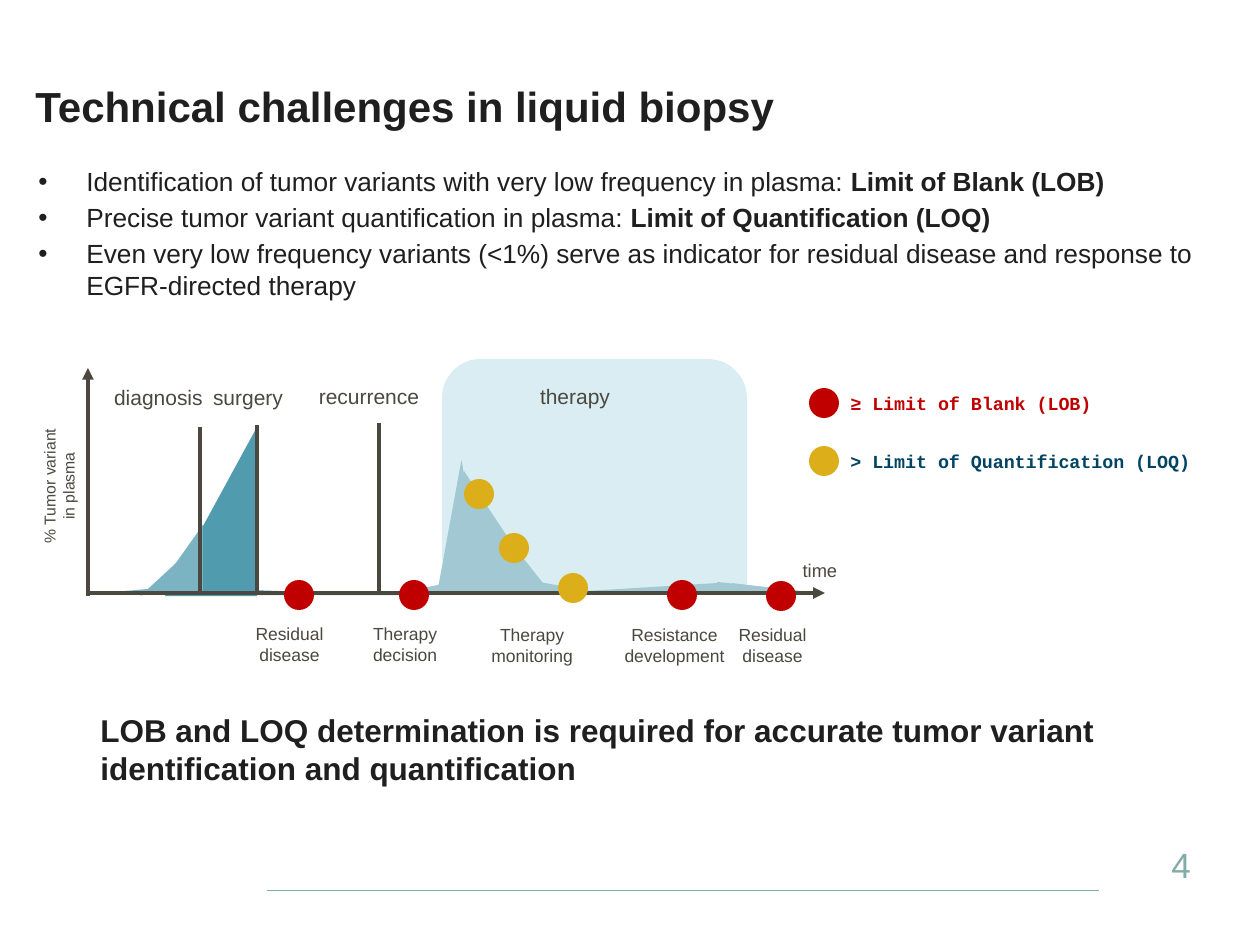
from pptx import Presentation
from pptx.dml.color import RGBColor
from pptx.enum.shapes import MSO_CONNECTOR as CONN, MSO_SHAPE as SHAPE
from pptx.enum.text import MSO_ANCHOR as ANCHOR, PP_ALIGN as ALIGN
from pptx.oxml.ns import qn
from pptx.util import Pt
from lxml.etree import SubElement

PX = 914400 / 126
COLORS = {
    "ink": "1F1F1F", "grey": "4B483F", "sage": "81ADA8", "panel": "D9EDF3",
    "deep": "519BAF", "mid": "7CB3C2", "pale": "A1C8D3",
    "red": "C00000", "gold": "DCAE1A", "navy": "004363",
}


def px(n):
    return round(n * PX)


def rgb(name):
    return RGBColor.from_string(COLORS[name])


def add_shape(s, kind, x, y, w, h, color=None, flip=False, turn=0):
    sp = s.shapes.add_shape(kind, px(x), px(y), px(w), px(h))
    sp.shadow.inherit = False
    sp.line.fill.background()
    if color:
        sp.fill.solid()
        sp.fill.fore_color.rgb = rgb(color)
    else:
        sp.fill.background()
    sp.rotation = turn
    if flip:
        sp._element.spPr.find(qn("a:xfrm")).set("flipH", "1")
    return sp


def add_line(s, x1, y1, x2, y2, color="grey", width=2.25, arrow=False):
    c = s.shapes.add_connector(CONN.STRAIGHT, px(x1), px(y1), px(x2), px(y2))
    c.line.color.rgb = rgb(color)
    c.line.width = Pt(width)
    if arrow:
        SubElement(c.line._get_or_add_ln(), qn("a:tailEnd"), type="triangle")
    SubElement(c._element.spPr, qn("a:effectLst"))


def write(tf, paras, size, color="grey", align=ALIGN.LEFT, bold=False,
          font="Arial", wrap=True, anchor=ANCHOR.TOP):
    """Each paragraph is a list of (text, bold) runs or a plain string."""
    for name, value in {"word_wrap": wrap, "vertical_anchor": anchor}.items():
        setattr(tf, name, value)
    for i, runs in enumerate(paras):
        p = tf.paragraphs[0] if i == 0 else tf.add_paragraph()
        p.alignment = align
        p.line_spacing = Pt(round(size * 1.21, 1))
        for text, strong in [(runs, bold)] if isinstance(runs, str) else runs:
            r = p.add_run()
            r.text = text
            style = {"name": font, "size": Pt(size), "bold": strong}
            for name, value in style.items():
                setattr(r.font, name, value)
            r.font.color.rgb = rgb(color)


def add_text(s, x, y, w, h, paras, size, turn=0, **style):
    box = s.shapes.add_textbox(px(x), px(y), px(w), px(h))
    box.rotation = turn
    write(box.text_frame, paras, size, **style)
    return box.text_frame


def add_dot(s, x, y, color):
    add_shape(s, SHAPE.OVAL, x, y, 30, 30, color)


def add_bullets(s, x, y, w, h):
    tf = add_text(s, x, y, w, h, [
        [("Identification of tumor variants with very low frequency in plasma: ", False),
         ("Limit of Blank (LOB)", True)],
        [("Precise tumor variant quantification in plasma: ", False),
         ("Limit of Quantification (LOQ)", True)],
        "Even very low frequency variants (<1%) serve as indicator for residual "
        "disease and response to EGFR-directed therapy",
    ], 15, color="ink")
    for i, p in enumerate(tf.paragraphs):
        if i:
            p.space_before = Pt(2.5)
        pPr = p._p.get_or_add_pPr()
        pPr.set("marL", str(px(48)))
        pPr.set("indent", str(px(-48)))
        SubElement(pPr, qn("a:buFont"), typeface="Arial")
        SubElement(pPr, qn("a:buChar"), char="•")


def add_timeline(s, x, y):
    # Therapy panel and tumor load curve
    rt, tri = SHAPE.RIGHT_TRIANGLE, SHAPE.ISOSCELES_TRIANGLE
    for kind, dx, dy, w, h, color, flip, turn in [
        (SHAPE.RECTANGLE, 420, 197, 287, 45, "panel", False, 0),
        (tri, 616, 233, 151, 9, "pale", False, 0),
        (SHAPE.ROUNDED_RECTANGLE, 402, 9, 305, 233, "panel", False, 0),
        (tri, 397, 110, 49, 134, "pale", False, 0),
        (rt, 125, 77, 92, 169, "deep", True, 0),
        (rt, 49, 235, 106, 9, "mid", True, 0),
        (rt, 114, 175, 49, 69, "mid", True, 0),
        (rt, 100, 227, 49, 18, "mid", False, 137.3),
        (rt, 209, 240, 154, 5, "deep", False, 0),
        (rt, 353, 228, 79, 16, "pale", True, 0),
        (rt, 289, 240, 92, 4, "deep", True, 0),
        (rt, 424, 121, 81, 123, "pale", False, 0),
        (rt, 468, 189, 42, 53, "pale", False, 0),
        (rt, 478, 228, 81, 15, "pale", False, 0),
        (rt, 498, 233, 180, 11, "pale", True, 0),
        (rt, 677, 232, 93, 10, "pale", False, 0),
    ]:
        add_shape(s, kind, x + dx, y + dy, w, h, color, flip, turn)

    # Event markers and axes
    for dx, top in [(160, 77), (217, 75), (339, 73)]:
        add_line(s, x + dx, y + top + 168, x + dx, y + top)
    add_line(s, x + 48, y + 246, x + 48, y + 18, arrow=True)
    add_line(s, x + 47, y + 243, x + 785, y + 243, arrow=True)

    # Measurement points
    for dx, dy, color in [
        (459, 183, "gold"), (424, 129, "gold"), (627, 230, "red"),
        (726, 231, "red"), (244, 230, "red"), (359, 230, "red"),
        (518, 223, "gold"),
    ]:
        add_dot(s, x + dx, y + dy, color)

    # Axis titles
    add_text(s, x + 749, y + 203, 62, 35, ["time"], 10.5, align=ALIGN.CENTER)
    add_text(s, x - 141, y + 111, 319, 50, ["% Tumor variant", "in plasma"], 9,
             turn=270, align=ALIGN.CENTER)

    # Phase names above, sampling purposes below
    for dx, dy, w, text in [(61, 28, 115, "diagnosis"), (160, 28, 96, "surgery"),
                            (266, 27, 126, "recurrence"), (487, 27, 96, "therapy")]:
        add_text(s, x + dx, y + dy, w, 38, [text], 12, align=ALIGN.CENTER, wrap=False)
    for dx, dy, w, paras in [
        (168, 264, 163, ["Residual", "disease"]),
        (255, 264, 220, ["Therapy", "decision"]),
        (560, 265, 149, ["Resistance", "development"]),
        (400, 265, 184, ["Therapy", "monitoring"]),
        (667, 265, 131, ["Residual disease"]),
    ]:
        sp = add_shape(s, SHAPE.ROUNDED_RECTANGLE, x + dx, y + dy, w, 60)
        write(sp.text_frame, paras, 10, align=ALIGN.CENTER)


def add_legend(s, x, y):
    for i, (dot, color, w, text) in enumerate([
        ("red", "red", 328, "≥ Limit of Blank (LOB)"),
        ("gold", "navy", 378, "> Limit of Quantification (LOQ)"),
    ]):
        top = y + 58 * i
        add_dot(s, x, top + 2, dot)
        add_text(s, x + 29, top, w, 35, [text], 10.5, color=color, bold=True,
                 font="Courier New")


def add_footer(s, x, y):
    add_line(s, x, y + 51, x + 832, y + 51, "sage", 0.5)
    add_text(s, x + 892, y, 101, 50, ["4"], 20, color="sage", anchor=ANCHOR.MIDDLE)


def main():
    prs = Presentation()
    prs.slide_width, prs.slide_height = px(1260), px(945)
    s = prs.slides.add_slide(prs.slide_layouts[6])
    add_footer(s, 267, 839)
    add_text(s, 23, 74, 1021, 63, ["Technical challenges in liquid biopsy"], 24,
             color="ink", bold=True)
    add_bullets(s, 26, 159, 1208, 180)
    add_timeline(s, 40, 350)
    add_legend(s, 809, 386)
    add_text(s, 88, 704, 1032, 89,
             ["LOB and LOQ determination is required for accurate tumor variant "
              "identification and quantification"], 18, color="ink", bold=True)
    prs.save("out.pptx")


if __name__ == "__main__":
    main()
